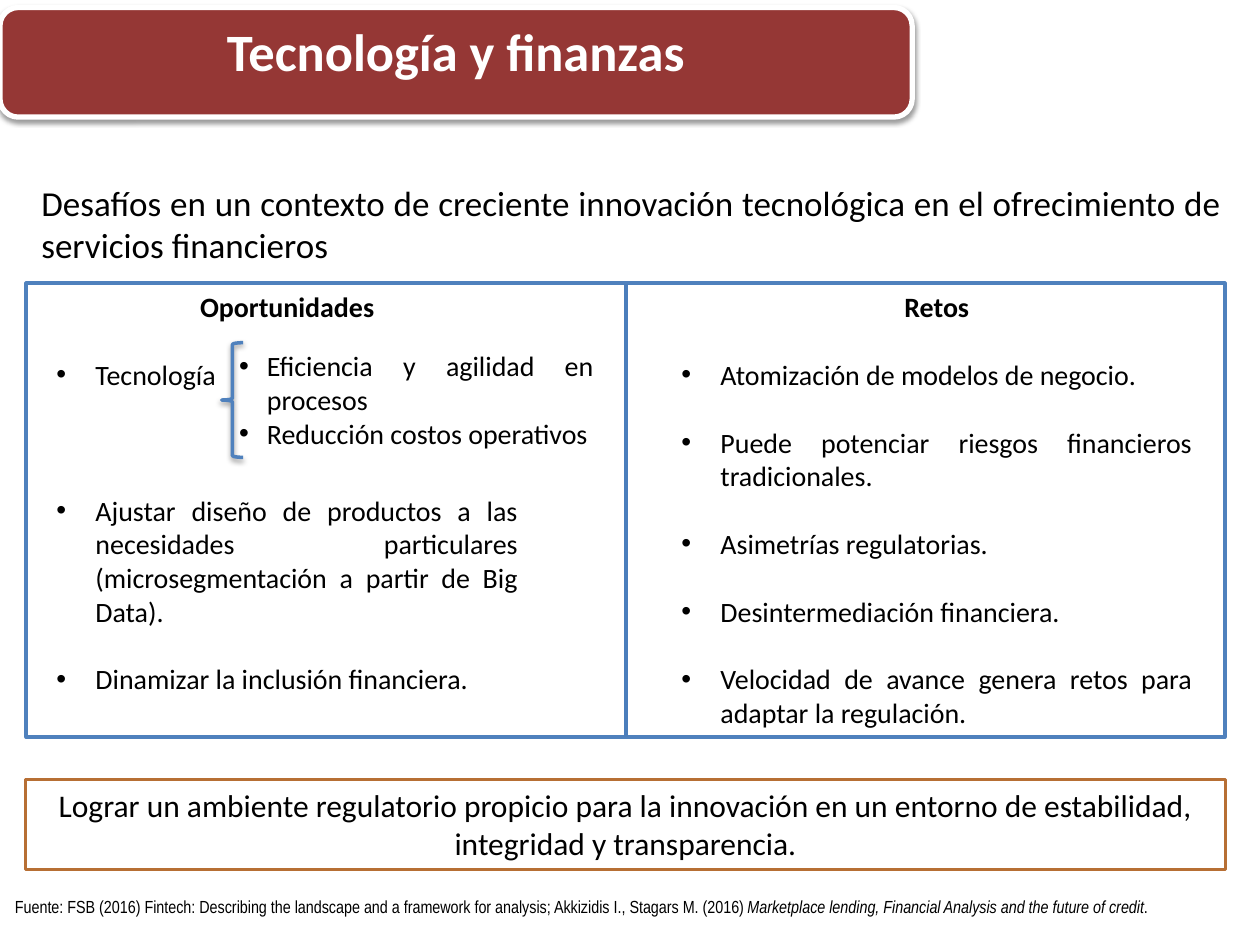
from lxml import etree
from pptx import Presentation
from pptx.dml.color import RGBColor
from pptx.enum.shapes import MSO_CONNECTOR, MSO_SHAPE
from pptx.enum.text import MSO_ANCHOR, PP_ALIGN
from pptx.oxml import parse_xml
from pptx.oxml.ns import nsdecls, qn
from pptx.util import Inches, Pt

LEFT, MID, JUST = PP_ALIGN.LEFT, PP_ALIGN.CENTER, PP_ALIGN.JUSTIFY
TOP = MSO_ANCHOR.TOP
RECT, ROUND, BRACE = MSO_SHAPE.RECTANGLE, MSO_SHAPE.ROUNDED_RECTANGLE, MSO_SHAPE.LEFT_BRACE

COLORS = {"red": "953735", "blue": "4F81BD", "rule": "4B7EBC",
          "brown": "B76F34", "white": "FFFFFF", "black": "000000"}

TITLE = "Tecnología y finanzas"
INTRO = ("Desafíos en un contexto de creciente innovación tecnológica "
         "en el ofrecimiento de servicios financieros")
GOAL = ("Lograr un ambiente regulatorio propicio para la innovación en un "
        "entorno de estabilidad, integridad y transparencia.")
SOURCE = [
    ("Fuente: FSB (2016) Fintech: Describing the landscape and a framework for "
     "analysis; Akkizidis I., Stagars M. (2016) ", False),
    ("Marketplace lending, Financial Analysis and the future of credit", True),
    (".", False),
]
# Each list: box, heading, then (lines of gap above, item)
LISTS = [
    ((0.35, 2.25, 3.86, 3.33), "Oportunidades", [
        (1, "Tecnología"),
        (3, "Ajustar diseño de productos a las necesidades particulares "
            "(microsegmentación a partir de Big Data)."),
        (1, "Dinamizar la inclusión financiera."),
    ]),
    ((5.31, 2.25, 4.25, 3.6), "Retos", [
        (1, "Atomización de modelos de negocio."),
        (1, "Puede potenciar riesgos financieros tradicionales."),
        (1, "Asimetrías regulatorias."),
        (1, "Desintermediación financiera."),
        (1, "Velocidad de avance genera retos para adaptar la regulación."),
    ]),
]
GAINS = ["Eficiencia y agilidad en procesos", "Reducción costos operativos"]
LINE = 19.5  # height of a 16 pt line, in points


def rgb(name):
    return RGBColor.from_string(COLORS[name])


def style(para, size, align=LEFT, bold=False, color="black", face="Calibri"):
    para.alignment = align
    for run in para.runs:
        font = run.font
        font.name, font.size, font.bold = face, Pt(size), bold
        font.color.rgb = rgb(color)


def bullet(para, indent):
    props = para._p.get_or_add_pPr()
    props.set("marL", str(Inches(indent)))
    props.set("indent", str(-Inches(indent)))
    etree.SubElement(props, qn("a:buFont")).set("typeface", "Arial")
    etree.SubElement(props, qn("a:buChar")).set("char", "•")


def add_text(slide, box):
    frame = slide.shapes.add_textbox(*map(Inches, box)).text_frame
    frame.word_wrap = True
    return frame


def add_items(frame, items, indent, fresh):
    """Add bulleted items; fresh means the frame's first paragraph is unused."""
    for i, (gap, text) in enumerate(items):
        para = frame.paragraphs[0] if fresh and i == 0 else frame.add_paragraph()
        para.text = text
        bullet(para, indent)
        if gap:
            para.space_before = Pt(gap * LINE)
        style(para, 16, JUST)


def add_box(slide, kind, box, line, width, fill=None):
    shape = slide.shapes.add_shape(kind, *map(Inches, box))
    shape.shadow.inherit = False
    shape.line.color.rgb = rgb(line)
    shape.line.width = Pt(width)
    if fill:
        shape.fill.solid()
        shape.fill.fore_color.rgb = rgb(fill)
    else:
        shape.fill.background()
    return shape


def add_shadow(shape):
    effects = shape._element.spPr.find(qn("a:effectLst"))
    effects.append(parse_xml(
        f'<a:outerShdw {nsdecls("a")} blurRad="{Pt(3.1)}" dist="{Pt(1.6)}" '
        'dir="5400000" rotWithShape="0"><a:srgbClr val="000000">'
        '<a:alpha val="38000"/></a:srgbClr></a:outerShdw>'))


def fill_box(shape, text, size, color, bold=False):
    frame = shape.text_frame
    frame.word_wrap = True
    frame.vertical_anchor = TOP
    frame.text = text
    style(frame.paragraphs[0], size, MID, bold, color)


def main():
    deck = Presentation()
    deck.slide_width, deck.slide_height = Inches(10), Inches(7.5)
    slide = deck.slides.add_slide(deck.slide_layouts[6])

    intro = add_text(slide, (0.23, 1.39, 9.56, 0.77))
    intro.text = INTRO
    style(intro.paragraphs[0], 20, JUST)

    para = add_text(slide, (0.02, 7.06, 9.98, 0.27)).paragraphs[0]
    for text, slant in SOURCE:
        run = para.add_run()
        run.text, run.font.italic = text, slant
    style(para, 10, face="Arial Narrow")

    for box, head, items in LISTS:
        frame = add_text(slide, box)
        frame.text = head
        style(frame.paragraphs[0], 16, MID, True)
        add_items(frame, items, 0.31, False)

    gains = add_text(slide, (1.8, 2.72, 3.01, 0.91))
    add_items(gains, [(0, text) for text in GAINS], 0.22, True)
    add_shadow(add_box(slide, BRACE, (1.76, 2.72, 0.17, 0.91), "blue", 2))

    goal = add_box(slide, RECT, (0.2, 6.19, 9.53, 0.71), "brown", 1.75)
    fill_box(goal, GOAL, 18, "black")

    panel = add_box(slide, RECT, (0.21, 2.25, 9.51, 3.6), "blue", 2.25)
    rule = slide.shapes.add_connector(MSO_CONNECTOR.STRAIGHT, 0, 0, 0, 0)
    rule.begin_connect(panel, 0)
    rule.end_connect(panel, 2)
    rule.line.color.rgb = rgb("rule")
    rule.line.width = Pt(2.25)
    etree.SubElement(rule._element.spPr, qn("a:effectLst"))

    title = add_box(slide, ROUND, (0, 0.06, 7.24, 0.87), "white", 3, "red")
    add_shadow(title)
    fill_box(title, TITLE, 30, "white", True)

    deck.save("out.pptx")


if __name__ == "__main__":
    main()
